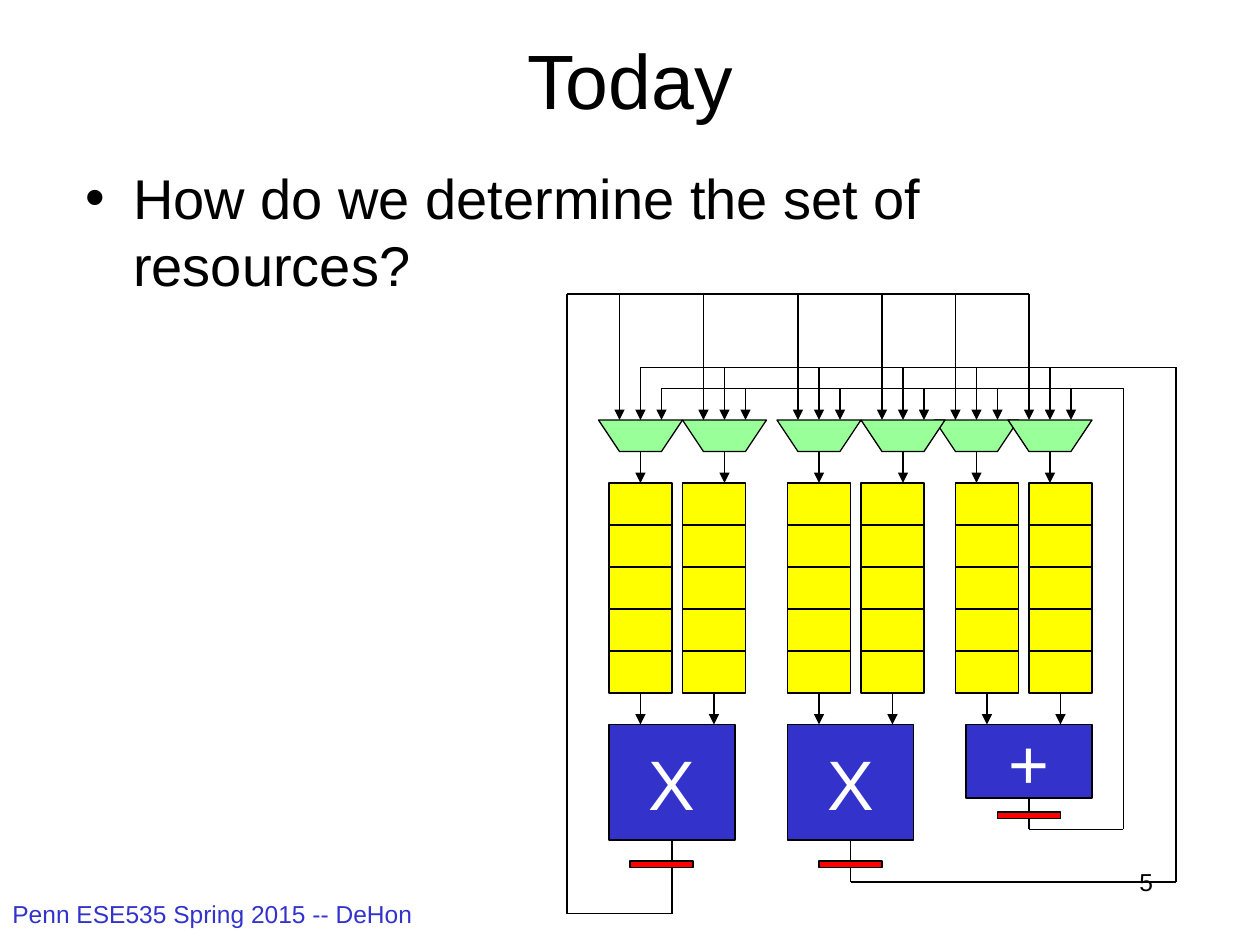
from lxml import etree
from pptx import Presentation
from pptx.dml.color import RGBColor
from pptx.enum.shapes import MSO_CONNECTOR, MSO_SHAPE
from pptx.enum.text import MSO_ANCHOR as ANCHOR, PP_ALIGN as ALIGN
from pptx.oxml.ns import qn
from pptx.util import Pt

BLACK = RGBColor(0x00, 0x00, 0x00)
WHITE = RGBColor(0xFF, 0xFF, 0xFF)
BLUE = RGBColor(0x33, 0x33, 0xCC)
YELLOW = RGBColor(0xFF, 0xFF, 0x00)
GREEN = RGBColor(0x99, 0xFF, 0x99)
RED = RGBColor(0xFF, 0x00, 0x00)

deck = Presentation()
deck.slide_width, deck.slide_height = Pt(720), Pt(540)
page = deck.slides.add_slide(deck.slide_layouts[6])


def add_block(fill, left, top, width, height, shape=None):
    """Style the given shape, or a new rectangle, with a fill and a thin outline."""
    if shape is None:
        shape = page.shapes.add_shape(
            MSO_SHAPE.RECTANGLE, Pt(left), Pt(top), Pt(width), Pt(height))
    shape.shadow.inherit = False
    shape.fill.solid()
    shape.fill.fore_color.rgb = fill
    shape.line.color.rgb = BLACK
    shape.line.width = Pt(0.75)
    return shape


def add_wire(x1, y1, x2, y2, arrow=False):
    wire = page.shapes.add_connector(
        MSO_CONNECTOR.STRAIGHT, Pt(x1), Pt(y1), Pt(x2), Pt(y2))
    wire.line.color.rgb = BLACK
    wire.line.width = Pt(0.75)
    if arrow:
        etree.SubElement(wire.line._get_or_add_ln(), qn("a:tailEnd"), type="triangle")
    etree.SubElement(wire._element.spPr, qn("a:effectLst"))
    return wire


# Title, question, footer and page number
for text, left, top, width, height, size, color, align, anchor in (
    ("Today", 54, 0, 612, 90, 44, BLACK, ALIGN.CENTER, ANCHOR.MIDDLE),
    ("How do we determine the set of resources?",
     42, 90, 612, 324, 32, BLACK, ALIGN.LEFT, ANCHOR.TOP),
    ("Penn ESE535 Spring 2015 -- DeHon", 0, 510, 276, 30, 14, BLUE, ALIGN.LEFT, ANCHOR.TOP),
    ("5", 516, 492, 150, 36, 14, BLACK, ALIGN.RIGHT, ANCHOR.TOP),
):
    box = page.shapes.add_textbox(Pt(left), Pt(top), Pt(width), Pt(height))
    box.text_frame.word_wrap = True
    box.text_frame.vertical_anchor = anchor
    para = box.text_frame.paragraphs[0]
    para.text = text
    para.alignment = align
    if size == 32:
        props = para._p.get_or_add_pPr()
        props.set("marL", str(Pt(27)))
        props.set("indent", str(-Pt(27)))
        etree.SubElement(props, qn("a:buFont"), typeface="Arial")
        etree.SubElement(props, qn("a:buChar"), char="•")
    span = para.runs[0]
    span.font.name = "Arial"
    span.font.size = Pt(size)
    span.font.color.rgb = color

# Datapath: muxes feed memory banks, which feed operator units
BUS_TOPS = (168, 210, 222)
MUX_TOP, MUX_BOTTOM = 240, 258
BANK_TOP, CELL_HEIGHT, CELL_COUNT = 276, 24, 5
BANK_BOTTOM = BANK_TOP + CELL_HEIGHT * CELL_COUNT
UNIT_TOP = 414

# Symbol, unit left, unit height, output wire end, bank lefts, mux lefts
UNITS = (
    ("+", 552, 42, 474, (546, 588), (534, 576)),
    ("X", 450, 66, 504, (450, 492), (444, 492)),
    ("X", 348, 66, 522, (348, 390), (342, 390)),
)
for symbol, unit_left, unit_height, output_end, banks, muxes in UNITS:
    unit = add_block(BLUE, unit_left, UNIT_TOP, 72, unit_height)
    frame = unit.text_frame
    frame.word_wrap = False
    frame.vertical_anchor = ANCHOR.MIDDLE
    frame.text = symbol
    frame.paragraphs[0].alignment = ALIGN.CENTER
    span = frame.paragraphs[0].runs[0]
    span.font.name = "Arial"
    span.font.size = Pt(40)
    span.font.color.rgb = WHITE

    for bank_left, mux_left in zip(banks, muxes):
        cells = [add_block(YELLOW, bank_left, BANK_TOP + row * CELL_HEIGHT, 36, CELL_HEIGHT)
                 for row in range(CELL_COUNT)]
        bank_middle, mux_middle = bank_left + 18, mux_left + 24
        operand = add_wire(bank_middle, BANK_BOTTOM, bank_middle, UNIT_TOP, arrow=True)
        operand.begin_connect(cells[-1], 2)

        outline = page.shapes.build_freeform(mux_left, MUX_TOP, scale=Pt(1))
        outline.add_line_segments([(mux_left + 12, MUX_BOTTOM), (mux_left + 36, MUX_BOTTOM),
                                   (mux_left + 48, MUX_TOP)], close=True)
        add_block(GREEN, mux_left, MUX_TOP, 48, 18, outline.convert_to_shape())
        load = add_wire(mux_middle, MUX_BOTTOM, mux_middle, BANK_TOP, arrow=True)
        if mux_middle == bank_middle:
            load.end_connect(cells[0], 0)
        for slot, bus_top in enumerate(BUS_TOPS, start=1):
            tap = mux_left + 12 * slot
            add_wire(tap, bus_top, tap, MUX_TOP, arrow=True)

    output = unit_left + 36
    add_wire(output, UNIT_TOP + unit_height, output, output_end).begin_connect(unit, 2)

# Buses and the return paths from the unit outputs
for ends in (
    (324, 168, 462, 168), (456, 168, 588, 168), (324, 168, 324, 522), (384, 522, 324, 522),
    (366, 210, 474, 210), (468, 210, 672, 210), (672, 504, 672, 210), (486, 504, 672, 504),
    (378, 222, 486, 222), (480, 222, 642, 222), (642, 222, 642, 474), (642, 474, 588, 474),
):
    add_wire(*ends)

# Output registers
for left, top in ((360, 492), (468, 492), (570, 464)):
    add_block(RED, left, top, 36, 3.6)

deck.save("out.pptx")
